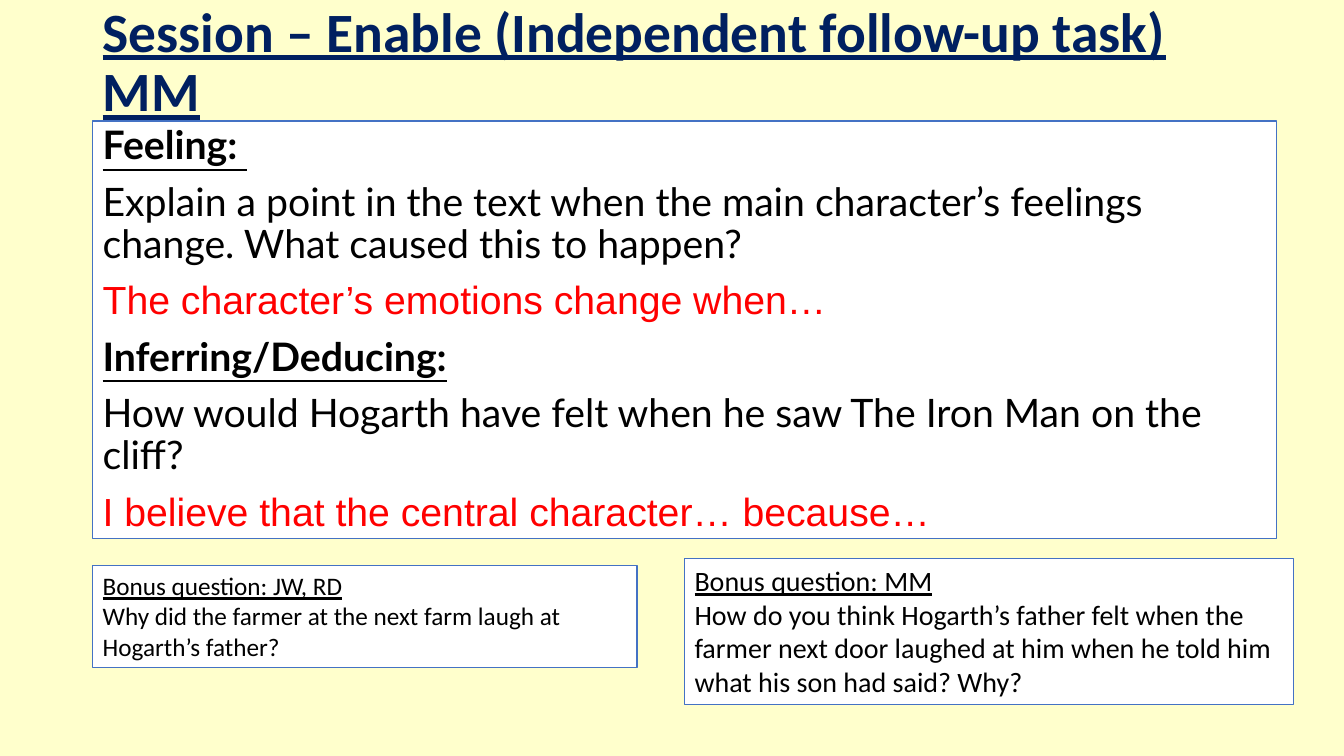
from dataclasses import dataclass

from pptx import Presentation
from pptx.dml.color import RGBColor
from pptx.enum.text import MSO_ANCHOR, MSO_AUTO_SIZE
from pptx.util import Inches, Pt


@dataclass(frozen=True)
class Theme:
    background: RGBColor = RGBColor(0xFF, 0xFF, 0xCC)
    panel: RGBColor = RGBColor(0xFF, 0xFF, 0xFF)
    border: RGBColor = RGBColor(0x44, 0x72, 0xC4)
    title: RGBColor = RGBColor(0x00, 0x20, 0x60)
    text: RGBColor = RGBColor(0x00, 0x00, 0x00)
    answer: RGBColor = RGBColor(0xFF, 0x00, 0x00)
    title_size: float = 39.6
    task_size: float = 28
    bonus_sizes: tuple = (18, 20)
    font: str = "Calibri"
    task_font: str = "Lato"
    answer_font: str = "Arial"


theme = Theme()


def add_text_box(slide, left, top, width, height, bordered=True):
    """Add a wrapping text box, as a white bordered panel by default."""
    shape = slide.shapes.add_textbox(
        Inches(left), Inches(top), Inches(width), Inches(height))
    shape.text_frame.word_wrap = True
    if bordered:
        shape.fill.solid()
        shape.fill.fore_color.rgb = theme.panel
        shape.line.color.rgb = theme.border
        shape.line.width = Pt(1)
    return shape.text_frame


def write_paragraphs(text_frame, texts, styles):
    """Write one paragraph per text; a style is (font, size, colour, bold, underline)."""
    text_frame.text = "\n".join(texts)
    for paragraph, style in zip(text_frame.paragraphs, styles):
        font = paragraph.font
        font.name, size, font.color.rgb, font.bold, font.underline = style
        font.size = Pt(size)


presentation = Presentation()
presentation.slide_width = Inches(13.33)
presentation.slide_height = Inches(7.5)
slide = presentation.slides.add_slide(presentation.slide_layouts[6])
slide.background.fill.solid()
slide.background.fill.fore_color.rgb = theme.background

# Title
title_frame = add_text_box(slide, 0.92, 0.26, 11.5, 0.75, bordered=False)
title_frame.vertical_anchor = MSO_ANCHOR.MIDDLE
write_paragraphs(
    title_frame,
    ["Session – Enable (Independent follow-up task) MM"],
    [(theme.font, theme.title_size, theme.title, True, True)])
title_frame.paragraphs[0].line_spacing = 0.9

# Main task: heading, question and sentence starter, twice
task_texts = [
    "Feeling: ",
    "Explain a point in the text when the main character’s feelings change. "
    "What caused this to happen?",
    "The character’s emotions change when…",
    "Inferring/Deducing:",
    "How would Hogarth have felt when he saw The Iron Man on the cliff?",
    "I believe that the central character… because…",
]
task_styles = [
    (theme.task_font, theme.task_size, theme.text, True, True),
    (theme.task_font, theme.task_size, theme.text, False, False),
    (theme.answer_font, theme.task_size, theme.answer, False, False),
]
task_frame = add_text_box(slide, 0.92, 1.2, 11.74, 4.14)
write_paragraphs(task_frame, task_texts, task_styles * 2)
for paragraph in task_frame.paragraphs:
    paragraph.line_spacing = 0.9
    paragraph.space_before = Pt(10)

# Bonus questions
bonus_boxes = [
    ((0.92, 5.61, 5.4, 1.01),
     ["Bonus question: JW, RD",
      "Why did the farmer at the next farm laugh at Hogarth’s father?"]),
    ((6.79, 5.54, 6.04, 1.45),
     ["Bonus question: MM",
      "How do you think Hogarth’s father felt when the farmer next door "
      "laughed at him when he told him what his son had said? Why?"]),
]
for (position, texts), size in zip(bonus_boxes, theme.bonus_sizes):
    bonus_frame = add_text_box(slide, *position)
    bonus_frame.auto_size = MSO_AUTO_SIZE.SHAPE_TO_FIT_TEXT
    write_paragraphs(
        bonus_frame, texts,
        [(theme.font, size, theme.text, False, underline)
         for underline in (True, False)])

presentation.save("out.pptx")
